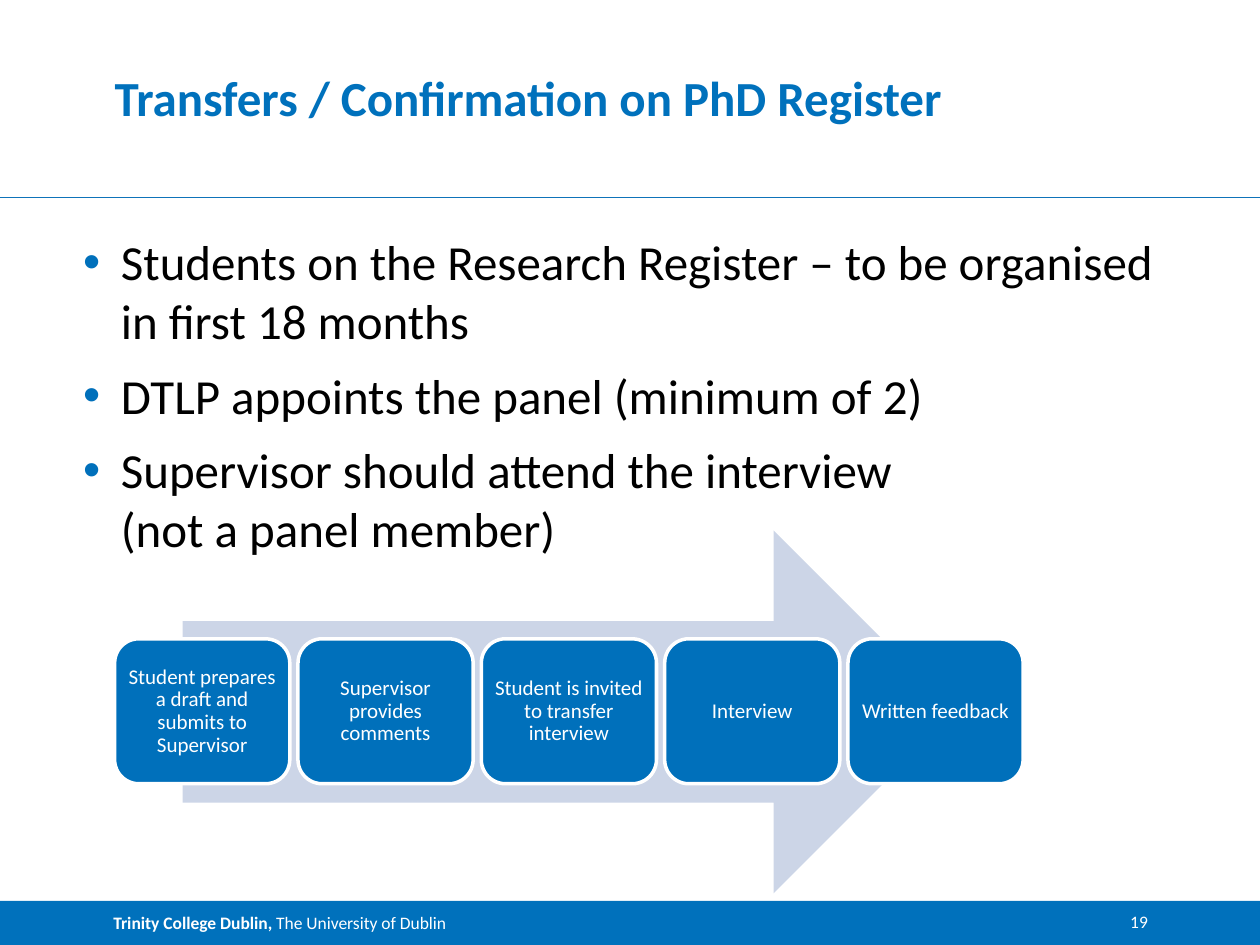
import pptx
import pptx.dml.color
import pptx.enum.shapes
import pptx.enum.text
import pptx.oxml
import pptx.oxml.ns
import pptx.util
from pptx.util import Inches, Pt

SHAPES = pptx.enum.shapes.MSO_SHAPE
ALIGN = pptx.enum.text.PP_ALIGN
ANCHOR = pptx.enum.text.MSO_ANCHOR

BULLETS = [
    "Students on the Research Register – to be organised in first 18 months",
    "DTLP appoints the panel (minimum of 2)",
    "Supervisor should attend the interview\v(not a panel member)",
]
STEPS = [
    "Student prepares a draft and submits to Supervisor",
    "Supervisor provides comments",
    "Student is invited to transfer interview",
    "Interview",
    "Written feedback",
]


def rgb(value):
    return pptx.dml.color.RGBColor.from_string(value)


def add_xml(parent, xml):
    """Append DrawingML given without its namespace declaration."""
    declared = xml.replace("<a:", f"<a:", 1).replace(
        "/>", f" {pptx.oxml.ns.nsdecls('a')}/>", 1)
    parent.append(pptx.oxml.parse_xml(declared))


class SlideBuilder:
    FONT = "Calibri"
    BLUE = "0071BC"
    BOX_BLUE = "0070BB"
    RULE_BLUE = "0E73B9"
    PALE = "CCD5E7"
    WHITE = "FFFFFF"
    BLACK = "000000"

    def __init__(self, slide):
        self.slide = slide

    def format_font(self, font, size, color, bold=None):
        font.name = self.FONT
        font.size = Pt(size)
        font.bold = bold
        font.color.rgb = rgb(color)

    def set_frame(self, shape, anchor, horizontal=0, vertical=0):
        """Set wrapping, anchor and insets (inches); return the text frame."""
        frame = shape.text_frame
        frame.word_wrap = True
        frame.auto_size = pptx.enum.text.MSO_AUTO_SIZE.NONE
        frame.vertical_anchor = anchor
        frame.margin_left = frame.margin_right = Inches(horizontal)
        frame.margin_top = frame.margin_bottom = Inches(vertical)
        return frame

    def title(self, text, left, top, width, height):
        shape = self.slide.shapes.title
        shape.left, shape.top = Inches(left), Inches(top)
        shape.width, shape.height = Inches(width), Inches(height)
        frame = self.set_frame(shape, ANCHOR.BOTTOM)
        frame.text = text
        paragraph = frame.paragraphs[0]
        paragraph.alignment = ALIGN.LEFT
        self.format_font(paragraph.font, 28, self.BLUE, True)

    def rule(self, left, right, y):
        line = self.slide.shapes.add_connector(
            pptx.enum.shapes.MSO_CONNECTOR.STRAIGHT,
            Inches(left), Inches(y), Inches(right), Inches(y))
        line.line.color.rgb = rgb(self.RULE_BLUE)
        line.line.width = Pt(0.75)
        add_xml(line._element.spPr, "<a:effectLst/>")

    def shape(self, kind, left, top, width, height, fill, outline=None):
        shape = self.slide.shapes.add_shape(
            kind, Inches(left), Inches(top), Inches(width), Inches(height))
        shape.shadow.inherit = False
        shape.fill.solid()
        shape.fill.fore_color.rgb = rgb(fill)
        if outline:
            shape.line.color.rgb = rgb(outline)
            shape.line.width = Pt(2)
        else:
            shape.line.fill.background()
        return shape

    def footer(self, bold_text, text, page):
        bar = self.shape(SHAPES.RECTANGLE, 0, 7.15, 10, 0.35, self.BLUE)
        frame = self.set_frame(bar, ANCHOR.MIDDLE, horizontal=0.1)
        frame.margin_left = Inches(0.9)
        paragraph = frame.paragraphs[0]
        paragraph.alignment = ALIGN.LEFT
        for content, bold in ((bold_text, True), (text, False)):
            run = paragraph.add_run()
            run.text = content
            self.format_font(run.font, 10, self.WHITE, bold)
        number = self.slide.shapes.add_textbox(
            Inches(8.7), Inches(7.23), Inches(0.41), Inches(0.17))
        frame = self.set_frame(number, ANCHOR.TOP)
        frame.text = page
        frame.paragraphs[0].alignment = ALIGN.RIGHT
        self.format_font(frame.paragraphs[0].font, 10, self.WHITE)

    def bullets(self, texts, left, top, width, height):
        box = self.slide.shapes.add_textbox(
            Inches(left), Inches(top), Inches(width), Inches(height))
        frame = self.set_frame(box, ANCHOR.TOP)
        for index, text in enumerate(texts):
            paragraph = frame.add_paragraph() if index else frame.paragraphs[0]
            paragraph.text = text
            if index:
                paragraph.space_before = Pt(9)
            properties = paragraph._p.get_or_add_pPr()
            properties.set("marL", str(Inches(0.3)))
            properties.set("indent", str(-Inches(0.3)))
            color = pptx.oxml.parse_xml(
                f'<a:buClr {pptx.oxml.ns.nsdecls("a")}>'
                f'<a:srgbClr val="{self.BOX_BLUE}"/></a:buClr>')
            properties.append(color)
            add_xml(properties, '<a:buFont typeface="Arial"/>')
            add_xml(properties, '<a:buChar char="•"/>')
            self.format_font(paragraph.font, 28, self.BLACK)

    def step(self, text, left, top, width, height):
        box = self.shape(SHAPES.ROUNDED_RECTANGLE, left, top, width, height,
                         self.BOX_BLUE, self.WHITE)
        frame = self.set_frame(box, ANCHOR.MIDDLE, 0.05, 0.05)
        frame.text = text
        paragraph = frame.paragraphs[0]
        paragraph.alignment = ALIGN.CENTER
        paragraph.line_spacing = 0.9
        self.format_font(paragraph.font, 12, self.WHITE)

    def process(self, steps):
        """Draw the arrow with one evenly spaced box per step."""
        self.shape(SHAPES.RIGHT_ARROW, 1.45, 4.21, 6.13, 2.88, self.PALE)
        first, last = 0.91, 6.73
        pitch = (last - first) / (len(steps) - 1)
        for index, text in enumerate(steps):
            self.step(text, first + index * pitch, 5.07, 1.39, 1.15)


def main():
    presentation = pptx.Presentation()
    presentation.slide_width = Inches(10)
    presentation.slide_height = Inches(7.5)
    slide = presentation.slides.add_slide(presentation.slide_layouts[5])
    builder = SlideBuilder(slide)
    builder.rule(0, 10, 1.57)
    builder.footer("Trinity College Dublin, ", "The University of Dublin", "19")
    builder.title("Transfers / Confirmation on PhD Register", 0.91, 0.39, 8.2, 0.61)
    builder.bullets(BULLETS, 0.66, 1.84, 8.5, 4.42)
    builder.process(STEPS)
    presentation.save("out.pptx")


if __name__ == "__main__":
    main()
